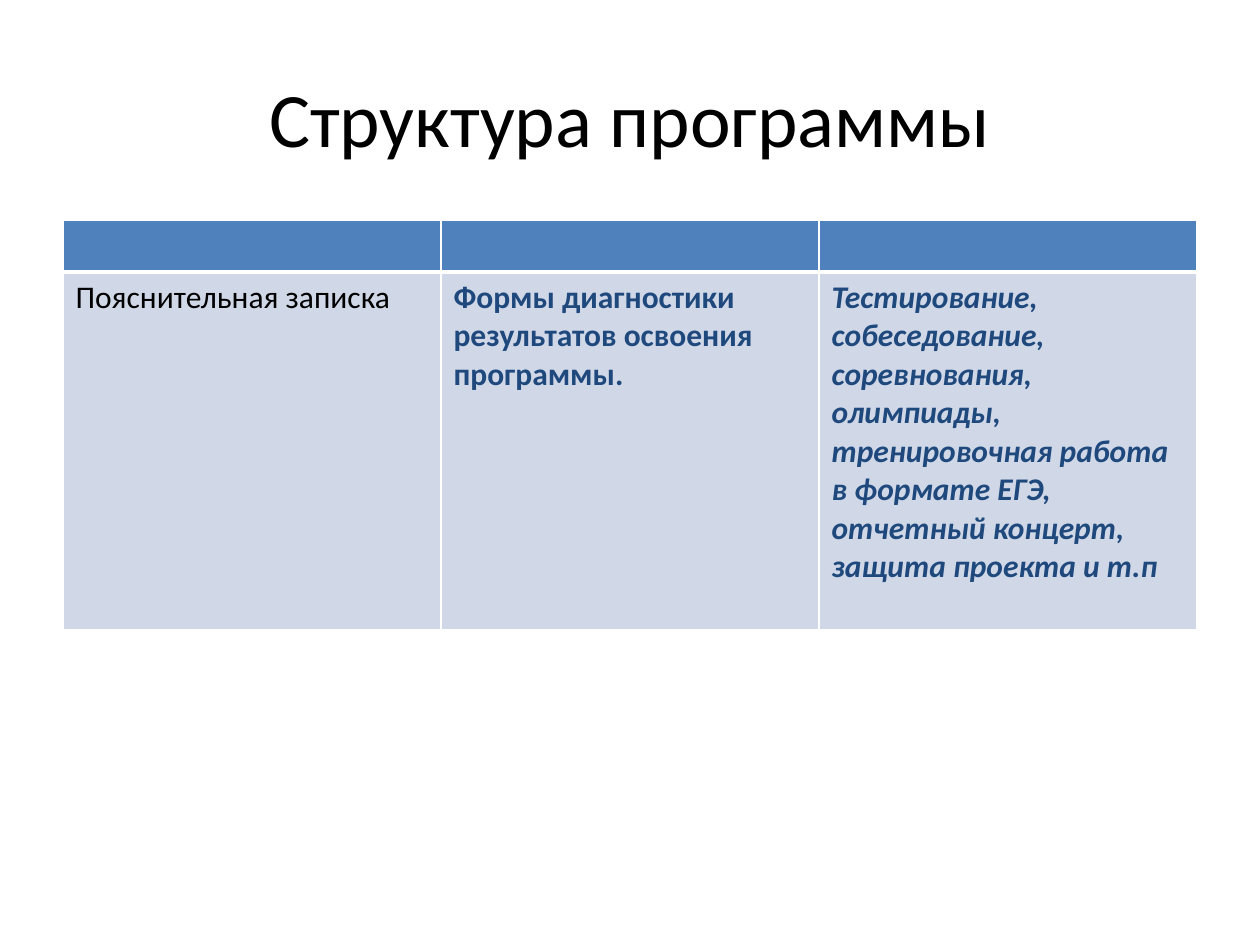
from lxml import etree
from pptx import Presentation
from pptx.dml.color import RGBColor
from pptx.enum.text import MSO_ANCHOR, PP_ALIGN
from pptx.oxml.ns import qn
from pptx.util import Pt

PX = 9144  # EMU per px, 100 px to the inch
MIDDLE = MSO_ANCHOR.MIDDLE
CENTER = PP_ALIGN.CENTER

BLACK = RGBColor(0x00, 0x00, 0x00)
WHITE = RGBColor(0xFF, 0xFF, 0xFF)
NAVY = RGBColor(0x1F, 0x49, 0x7D)
BLUE = RGBColor(0x4F, 0x81, 0xBD)
PALE = RGBColor(0xD0, 0xD8, 0xE8)

# text, colour, bold, italic
HEAD = [("", WHITE, True, False)] * 3
BODY = [
    ("Пояснительная записка", BLACK, False, False),
    ("Формы диагностики результатов освоения программы.", NAVY, True, False),
    ("Тестирование, собеседование, соревнования, олимпиады, "
     "тренировочная работа в формате ЕГЭ, отчетный концерт, "
     "защита проекта и т.п", NAVY, True, True),
]


class Deck:
    def __init__(self, wide, high, face):
        self.prs = Presentation()
        self.prs.slide_width = wide * PX
        self.prs.slide_height = high * PX
        self.slide = self.prs.slides.add_slide(self.prs.slide_layouts[6])
        self.face = face

    def style(self, para, size, color, bold=False, italic=False):
        font = para.font
        font.name, font.size = self.face, Pt(size)
        font.bold, font.italic = bold, italic
        font.color.rgb = color

    def title(self, text, box, size):
        frame = self.slide.shapes.add_textbox(*(n * PX for n in box)).text_frame
        frame.word_wrap = True
        frame.vertical_anchor = MIDDLE
        para = frame.paragraphs[0]
        para.text = text
        para.alignment = CENTER
        self.style(para, size, BLACK)

    def edge(self, cell, side, width):
        props = cell._tc.get_or_add_tcPr()
        line = etree.SubElement(props, qn("a:ln" + side), w=str(Pt(width)))
        fill = etree.SubElement(line, qn("a:solidFill"))
        etree.SubElement(fill, qn("a:srgbClr"), val=str(WHITE))

    def table(self, rows, fills, box, highs, size):
        """Draw rows of cells; a thick rule parts the first row from the next."""
        grid = self.slide.shapes.add_table(
            len(rows), len(rows[0]), *(n * PX for n in box)).table
        for r, row in enumerate(rows):
            grid.rows[r].height = highs[r] * PX
            for c, (text, *look) in enumerate(row):
                cell = grid.cell(r, c)
                para = cell.text_frame.paragraphs[0]
                para.text = text
                self.style(para, size, *look)
                for side in "LRTB":
                    thick = (r, side) in ((0, "B"), (1, "T"))
                    self.edge(cell, side, 3 if thick else 1)
                cell.fill.solid()
                cell.fill.fore_color.rgb = fills[r]

    def save(self):
        self.prs.save("out.pptx")


def main():
    deck = Deck(1000, 750, "Calibri")
    deck.title("Структура программы", (50, 30, 900, 125), 44)
    highs = (41, 284)
    deck.table([HEAD, BODY], (BLUE, PALE), (50, 175, 900, sum(highs)), highs, 18)
    deck.save()


if __name__ == "__main__":
    main()
